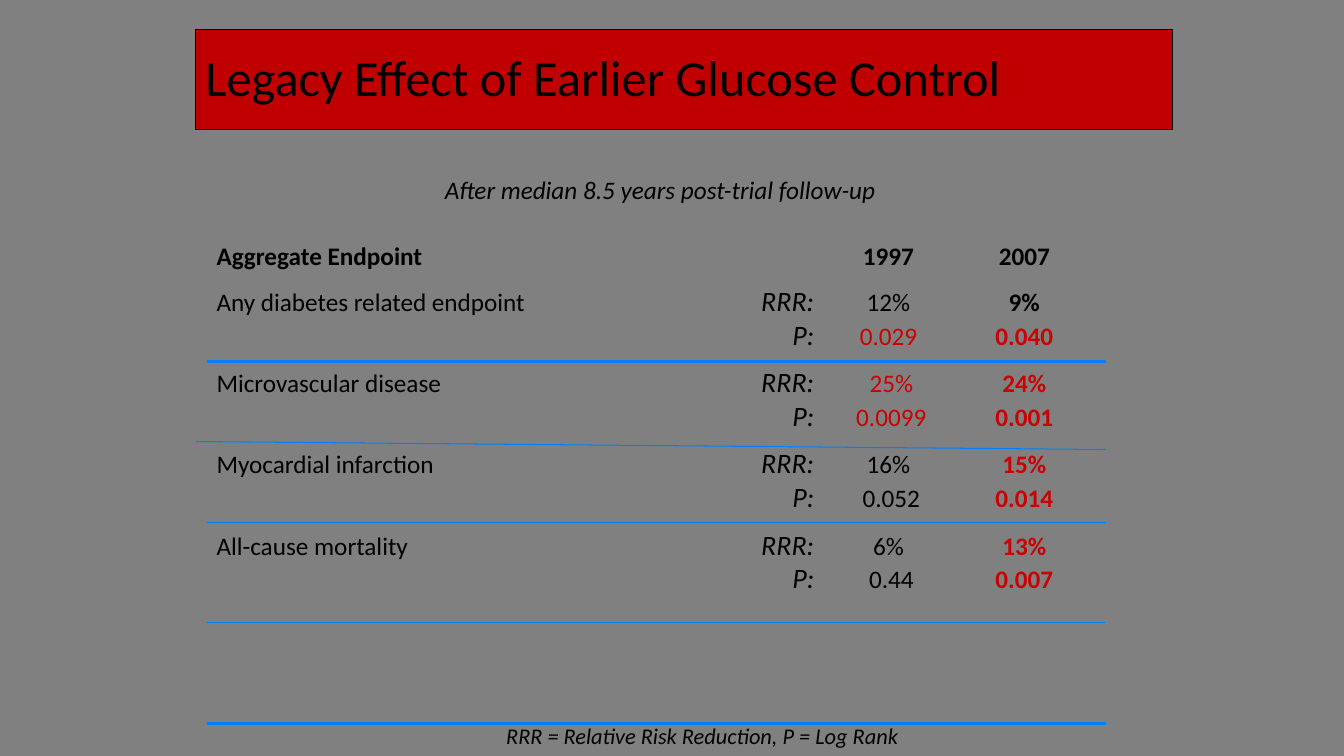
from pptx import Presentation
from pptx.dml.color import RGBColor
from pptx.enum.shapes import MSO_CONNECTOR, MSO_SHAPE
from pptx.enum.text import MSO_ANCHOR, PP_ALIGN
from pptx.util import Pt
from lxml import etree

RECTANGLE, STRAIGHT = MSO_SHAPE.RECTANGLE, MSO_CONNECTOR.STRAIGHT
MIDDLE = MSO_ANCHOR.MIDDLE
LEFT, CENTER, RIGHT = PP_ALIGN.LEFT, PP_ALIGN.CENTER, PP_ALIGN.RIGHT
DRAWING_NS = "{http://schemas.openxmlformats.org/drawingml/2006/main}"
COLORS = {"background": "808080", "banner": "C00000", "text": "000000",
          "significant": "CA0000", "rule": "0080FF"}


def add_run(paragraph, text, size=18, color="text", bold=False, italic=False):
    run = paragraph.add_run()
    run.text = text
    run.font.name = "Calibri"
    run.font.size = Pt(size)
    run.font.bold = bold
    run.font.italic = italic
    run.font.color.rgb = RGBColor.from_string(COLORS[color])


def add_line(paragraphs, align=LEFT, after=0, stops=()):
    """Append a paragraph with its spacing and tab stops."""
    line = paragraphs.add_paragraph() if paragraphs.text else paragraphs.paragraphs[0]
    line.alignment = align
    line.space_after = Pt(after)
    if stops:
        tabs = etree.SubElement(line._p.get_or_add_pPr(), DRAWING_NS + "tabLst")
        for position, kind in stops:
            etree.SubElement(tabs, DRAWING_NS + "tab", pos=str(Pt(position)), algn=kind)
    return line


prs = Presentation()
prs.slide_width, prs.slide_height = Pt(960), Pt(540)
slide = prs.slides.add_slide(prs.slide_layouts[6])
slide.background.fill.solid()
slide.background.fill.fore_color.rgb = RGBColor.from_string(COLORS["background"])

# Endpoint listing, aligned with tab stops
endpoints = slide.shapes.add_textbox(Pt(147.6), Pt(94.3), Pt(648), Pt(346.3)).text_frame
endpoints.word_wrap = True
endpoints.margin_top = Pt(30)
STOPS = [(427, "r"), (480, "ctr"), (577, "ctr")]

follow_up = add_line(endpoints, CENTER, after=26)
add_run(follow_up, "After median 8.5 years post-trial follow-up", italic=True)
header = add_line(endpoints, after=9, stops=STOPS)
add_run(header, "Aggregate Endpoint \t\t1997\t2007", bold=True)

# Endpoint, then (value, colour) for 1997 and 2007: risk reduction, P
RESULTS = [
    ("Any diabetes related endpoint",
     [("12%", "text"), ("9%", "text")],
     [(" 0.029 ", "significant"), ("0.040", "significant")]),
    ("Microvascular disease",
     [(" 25%", "significant"), ("24%", "significant")],
     [(" 0.0099", "significant"), ("0.001", "significant")]),
    ("Myocardial infarction",
     [("16%", "text"), ("15%", "significant")],
     [(" 0.052", "text"), ("0.014", "significant")]),
    ("All-cause mortality",
     [("6%", "text"), ("13%", "significant")],
     [(" 0.44", "text"), ("0.007", "significant")]),
]
for endpoint, reduction, p_values in RESULTS:
    for name, measure, values, after in ((endpoint, "RRR:", reduction, 0),
                                         ("", "P:", p_values, 10)):
        row = add_line(endpoints, after=after, stops=STOPS)
        add_run(row, name + "\t")
        add_run(row, measure, size=20, italic=True)
        (value_1997, color_1997), (value_2007, color_2007) = values
        add_run(row, "\t" + value_1997 + "\t", color=color_1997)
        add_run(row, value_2007, color=color_2007, bold=True)

# Rules between endpoints: left, start height, end height, weight
for left, start, end, weight in [(147.6, 258.5, 258.5, 2.25), (147.6, 517, 517, 2.25),
                                 (139.7, 315.4, 321.1, 0.75), (147.6, 373, 373, 0.75),
                                 (147.6, 445, 445, 0.75)]:
    rule = slide.shapes.add_connector(STRAIGHT, Pt(left), Pt(start), Pt(789.8), Pt(end))
    rule.line.color.rgb = RGBColor.from_string(COLORS["rule"])
    rule.line.width = Pt(weight)
    etree.SubElement(rule._element.spPr, DRAWING_NS + "effectLst")

# Abbreviations
abbreviations = slide.shapes.add_textbox(Pt(294.5), Pt(512), Pt(354.2), Pt(26.6)).text_frame
abbreviations.word_wrap = True
add_run(add_line(abbreviations, RIGHT), "RRR = Relative Risk Reduction, P = Log Rank",
        size=16, italic=True)

# Title banner
banner = slide.shapes.add_shape(RECTANGLE, Pt(139.7), Pt(21.3), Pt(697.7), Pt(71.5))
banner.shadow.inherit = False
banner.fill.solid()
banner.fill.fore_color.rgb = RGBColor.from_string(COLORS["banner"])
banner.line.color.rgb = RGBColor.from_string(COLORS["text"])
banner.line.width = Pt(0.75)
banner.text_frame.word_wrap = True
banner.text_frame.vertical_anchor = MIDDLE
title = add_line(banner.text_frame)
title.line_spacing = 0.9
add_run(title, "Legacy Effect of Earlier Glucose Control", size=36)

prs.save("out.pptx")
